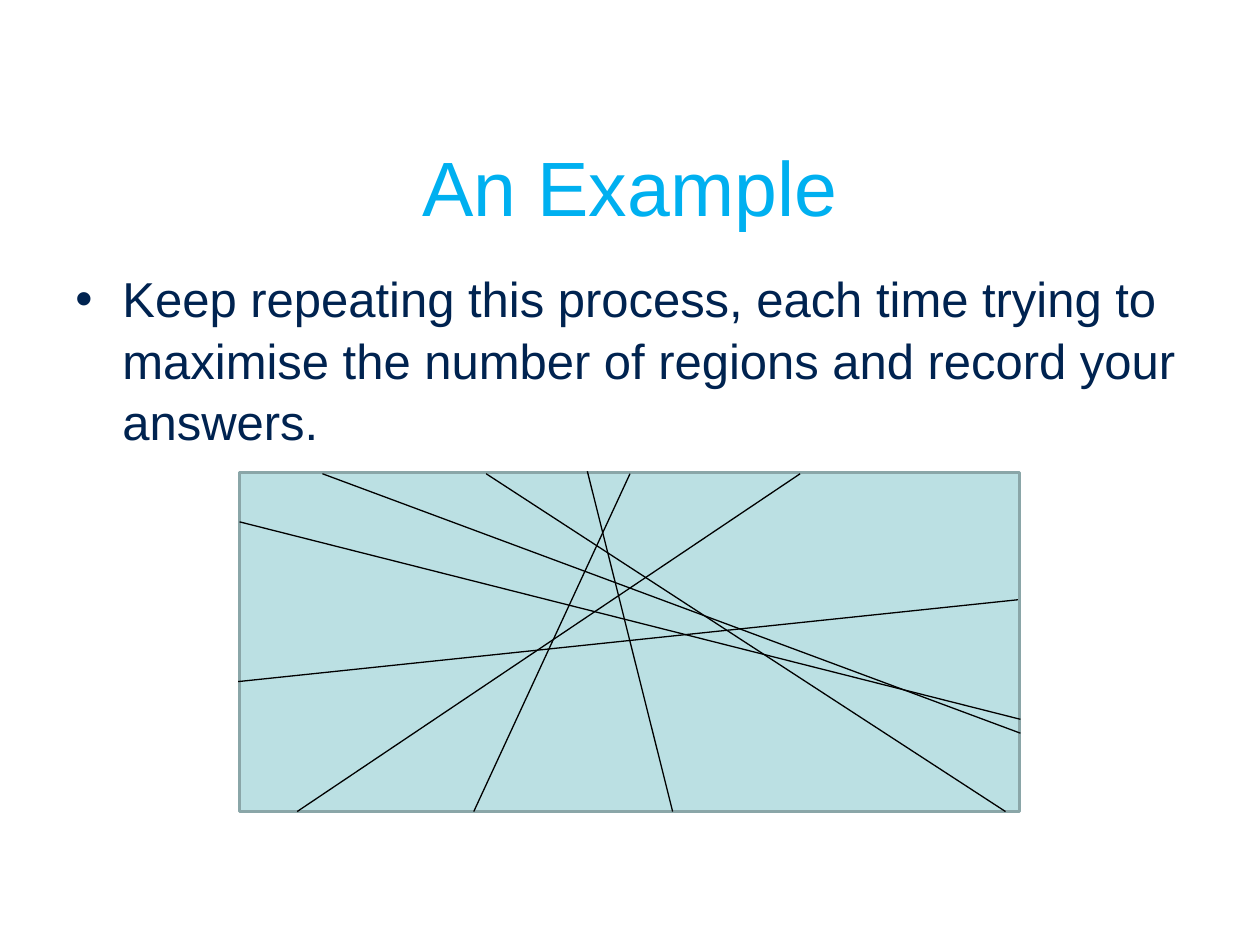
from lxml import etree
from pptx import Presentation
from pptx.dml.color import RGBColor
from pptx.enum.shapes import MSO_CONNECTOR as Connector, MSO_SHAPE as Shape
from pptx.enum.text import MSO_ANCHOR as Anchor, PP_ALIGN as Align
from pptx.oxml.ns import qn
from pptx.util import Cm, Pt

# Content
TITLE = "An Example"
INSTRUCTION = ("Keep repeating this process, each time trying to maximise "
               "the number of regions and record your answers.")

# Geometry in cm
MARGIN, TEXT_WIDTH = 1.27, 22.86
REGION = (4.83, 9.53, 15.72, 6.83)
TOP, BOTTOM = 9.55, 16.36
CUTS = [  # (start x, start y, end x, end y)
    (11.84, 9.5, 13.56, BOTTOM),
    (4.8, 13.74, 20.52, 12.09),
    (5.99, BOTTOM, 16.13, TOP),
    (4.83, 10.52, 20.57, 14.5),
    (12.7, TOP, 9.55, BOTTOM),
    (9.8, TOP, 20.27, BOTTOM),
    (6.5, TOP, 20.57, 14.78),
]


def color(value):
    return RGBColor.from_string(value)


def add_text(page, text, top, height, size, shade, anchor):
    box = page.shapes.add_textbox(Cm(MARGIN), Cm(top), Cm(TEXT_WIDTH), Cm(height))
    frame = box.text_frame
    frame.word_wrap = True
    frame.vertical_anchor = anchor
    para = frame.paragraphs[0]
    para.text = text
    return para, size, shade


def set_font(para, size, shade):
    font = para.font
    font.name, font.size = "Arial", Pt(size)
    font.color.rgb = color(shade)


def add_bullet(para, indent):
    properties = para._p.get_or_add_pPr()
    properties.set("marL", str(Cm(indent)))
    properties.set("indent", str(-Cm(indent)))
    etree.SubElement(properties, qn("a:buFont")).set("typeface", "Arial")
    etree.SubElement(properties, qn("a:buChar")).set("char", "•")


def add_cut(page, ends):
    line = page.shapes.add_connector(Connector.STRAIGHT, *map(Cm, ends))
    line.line.color.rgb = color("000000")
    line.line.width = Pt(0.75)
    etree.SubElement(line._element.spPr, qn("a:effectLst"))


deck = Presentation()
deck.slide_width, deck.slide_height = Cm(25.4), Cm(19.05)
page = deck.slides.add_slide(deck.slide_layouts[6])

# Title
para, size, shade = add_text(page, TITLE, 2.54, 2.39, 44, "00B0F0", Anchor.MIDDLE)
para.alignment = Align.CENTER
set_font(para, size, shade)

# Instruction
para, size, shade = add_text(page, INSTRUCTION, 5.25, 12.48, 28, "002350", Anchor.TOP)
para.line_spacing = 1.04
add_bullet(para, 0.95)
set_font(para, size, shade)

# Rectangle divided by straight cuts
region = page.shapes.add_shape(Shape.RECTANGLE, *map(Cm, REGION))
region.shadow.inherit = False
region.fill.solid()
region.fill.fore_color.rgb = color("BBE0E3")
region.line.color.rgb = color("8AA6A8")
region.line.width = Pt(2)
for ends in CUTS:
    add_cut(page, ends)

deck.save("out.pptx")
